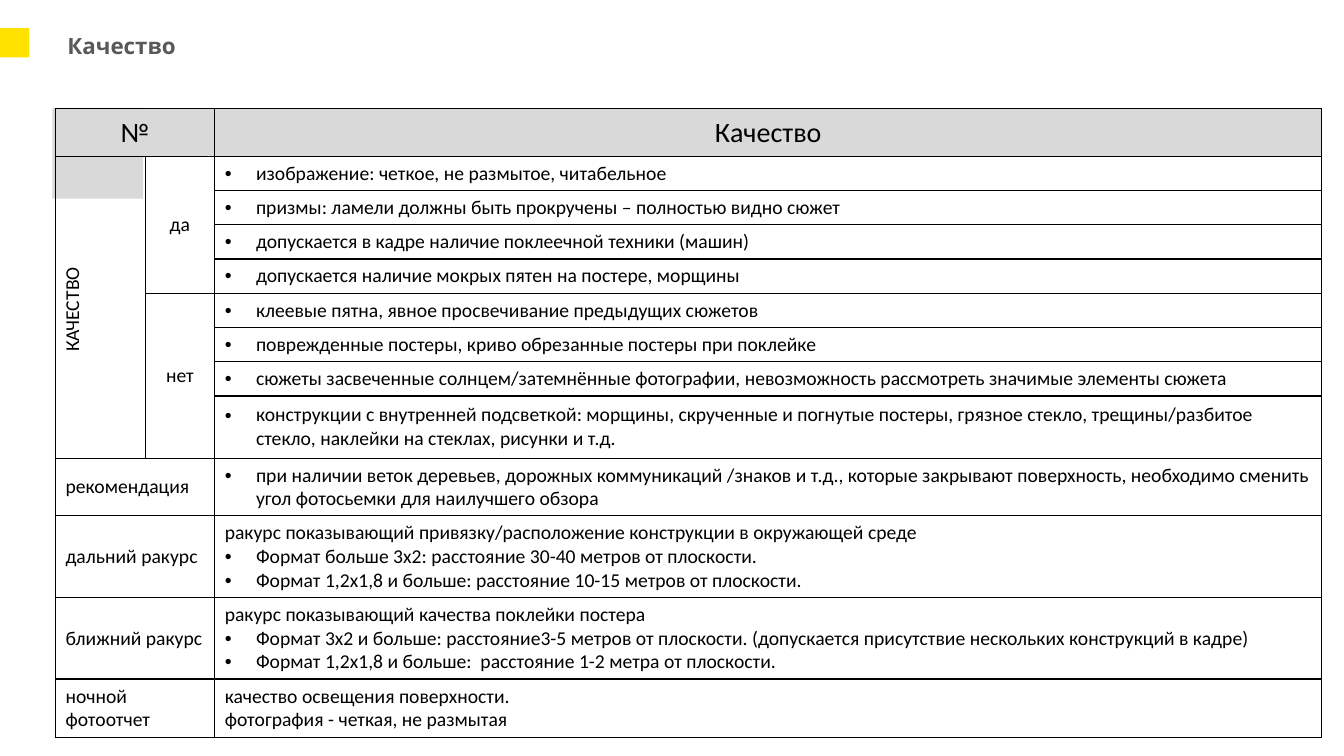
from lxml.etree import SubElement
from pptx import Presentation
from pptx.dml.color import RGBColor
from pptx.enum.shapes import MSO_SHAPE
from pptx.enum.text import MSO_ANCHOR, PP_ALIGN
from pptx.oxml.ns import qn
from pptx.util import Inches, Pt

COLORS = {"yellow": "FFE200", "grey": "D9D9D9", "title": "595959", "black": "000000"}
TITLE = "Качество"
HEADER = ["№", "Качество"]
SIDE = "КАЧЕСТВО "
GROUPS = [
    ("да", [
        "изображение: четкое, не размытое, читабельное",
        "призмы: ламели должны быть прокручены – полностью видно сюжет",
        "допускается в кадре наличие поклеечной техники (машин)",
        "допускается наличие мокрых пятен на постере, морщины",
    ]),
    ("нет", [
        "клеевые пятна, явное просвечивание предыдущих сюжетов",
        "поврежденные постеры, криво обрезанные постеры при поклейке",
        "сюжеты засвеченные солнцем/затемнённые фотографии, невозможность рассмотреть значимые элементы сюжета",
        "конструкции с внутренней подсветкой: морщины, скрученные и погнутые постеры, грязное стекло, "
        "трещины/разбитое стекло, наклейки на стеклах, рисунки и т.д.",
    ]),
]
DETAILS = [
    ("рекомендация", "", [
        "при наличии веток деревьев, дорожных коммуникаций /знаков и т.д., которые закрывают поверхность, "
        "необходимо сменить угол фотосьемки для наилучшего обзора",
    ]),
    ("дальний ракурс", "ракурс показывающий привязку/расположение конструкции в окружающей среде", [
        "Формат больше 3х2: расстояние 30-40 метров от плоскости.",
        "Формат 1,2х1,8 и больше: расстояние 10-15 метров от плоскости.",
    ]),
    ("ближний ракурс", "ракурс показывающий качества поклейки постера", [
        "Формат 3х2 и больше: расстояние3-5 метров от плоскости. "
        "(допускается присутствие нескольких конструкций в кадре)",
        "Формат 1,2х1,8 и больше:  расстояние 1-2 метра от плоскости.",
    ]),
    ("ночной фотоотчет", "качество освещения поверхности.\nфотография - четкая, не размытая", []),
]
BLOCKS = [("yellow", 0, 0.28, 0.29), ("grey", 0.52, 1.07, 0.9)]
COLS = [0.89, 0.69, 10.98]
ROWS = [0.47] + [0.34] * 7 + [0.62, 0.57, 0.81, 0.81, 0.58]


def rgb(name):
    return RGBColor.from_string(COLORS[name])


def add_run(p, text, size, font="Calibri", color="black", bold=False):
    r = p.add_run()
    r.text = text
    r.font.size, r.font.name, r.font.bold = Pt(size), font, bold
    r.font.color.rgb = rgb(color)


def add_bullet(p):
    pPr = p._p.get_or_add_pPr()
    pPr.set("marL", str(Inches(0.31)))
    pPr.set("indent", str(-Inches(0.31)))
    SubElement(pPr, qn("a:buFont"), typeface="Arial")
    SubElement(pPr, qn("a:buChar"), char="•")


def fill_cell(cell, lead="", bullets=(), size=14, align=PP_ALIGN.LEFT):
    tf = cell.text_frame
    items = ([(lead, False)] if lead else []) + [(b, True) for b in bullets]
    for i, (text, bulleted) in enumerate(items):
        p = tf.add_paragraph() if i else tf.paragraphs[0]
        p.alignment = align
        if bulleted:
            add_bullet(p)
        for j, line in enumerate(text.split("\n")):
            if j:
                p.add_line_break()
            add_run(p, line, size)


def style_cell(cell, header):
    tcPr = cell._tc.get_or_add_tcPr()
    for side in ("lnL", "lnR", "lnT", "lnB"):
        ln = SubElement(tcPr, qn(f"a:{side}"), w=str(Pt(1)))
        SubElement(SubElement(ln, qn("a:solidFill")), qn("a:srgbClr"), val=COLORS["black"])
    cell.vertical_anchor = MSO_ANCHOR.MIDDLE
    if header:
        cell.fill.solid()
        cell.fill.fore_color.rgb = rgb("grey")
        cell.margin_left = cell.margin_right = cell.margin_top = cell.margin_bottom = 0
    else:
        cell.fill.background()


prs = Presentation()
prs.slide_width, prs.slide_height = Inches(13.33), Inches(7.5)
s = prs.slides.add_slide(prs.slide_layouts[6])

for color, x, y, side in BLOCKS:
    sp = s.shapes.add_shape(MSO_SHAPE.RECTANGLE, Inches(x), Inches(y), Inches(side), Inches(side))
    sp.shadow.inherit = False
    sp.fill.solid()
    sp.fill.fore_color.rgb = rgb(color)
    sp.line.fill.background()

tf = s.shapes.add_textbox(Inches(0.57), Inches(0.29), Inches(10.29), Inches(0.3)).text_frame
tf.word_wrap = True
tf.margin_top = tf.margin_bottom = Inches(0.03)
add_run(tf.paragraphs[0], TITLE, 16, "Open Sans", "title", True)

table = s.shapes.add_table(len(ROWS), len(COLS), Inches(0.55), Inches(1.08),
                           Inches(sum(COLS)), Inches(sum(ROWS))).table
table.first_row = table.horz_banding = False
for col, width in zip(table.columns, COLS):
    col.width = Inches(width)
for i, height in enumerate(ROWS):
    table.rows[i].height = Inches(height)
    for j in range(len(COLS)):
        style_cell(table.cell(i, j), i == 0)

table.cell(0, 0).merge(table.cell(0, 1))
for j, text in zip((0, 2), HEADER):
    fill_cell(table.cell(0, j), text, size=20, align=PP_ALIGN.CENTER)

row = 1
for label, rules in GROUPS:
    table.cell(row, 1).merge(table.cell(row + len(rules) - 1, 1))
    fill_cell(table.cell(row, 1), label, align=PP_ALIGN.CENTER)
    for rule in rules:
        fill_cell(table.cell(row, 2), bullets=[rule])
        row += 1

side_cell = table.cell(1, 0)
side_cell.merge(table.cell(row - 1, 0))
side_cell._tc.get_or_add_tcPr().set("vert", "vert270")
fill_cell(side_cell, SIDE, align=PP_ALIGN.CENTER)

for i, (label, lead, bullets) in enumerate(DETAILS, row):
    table.cell(i, 0).merge(table.cell(i, 1))
    fill_cell(table.cell(i, 0), label)
    fill_cell(table.cell(i, 2), lead, bullets)

prs.save("out.pptx")
